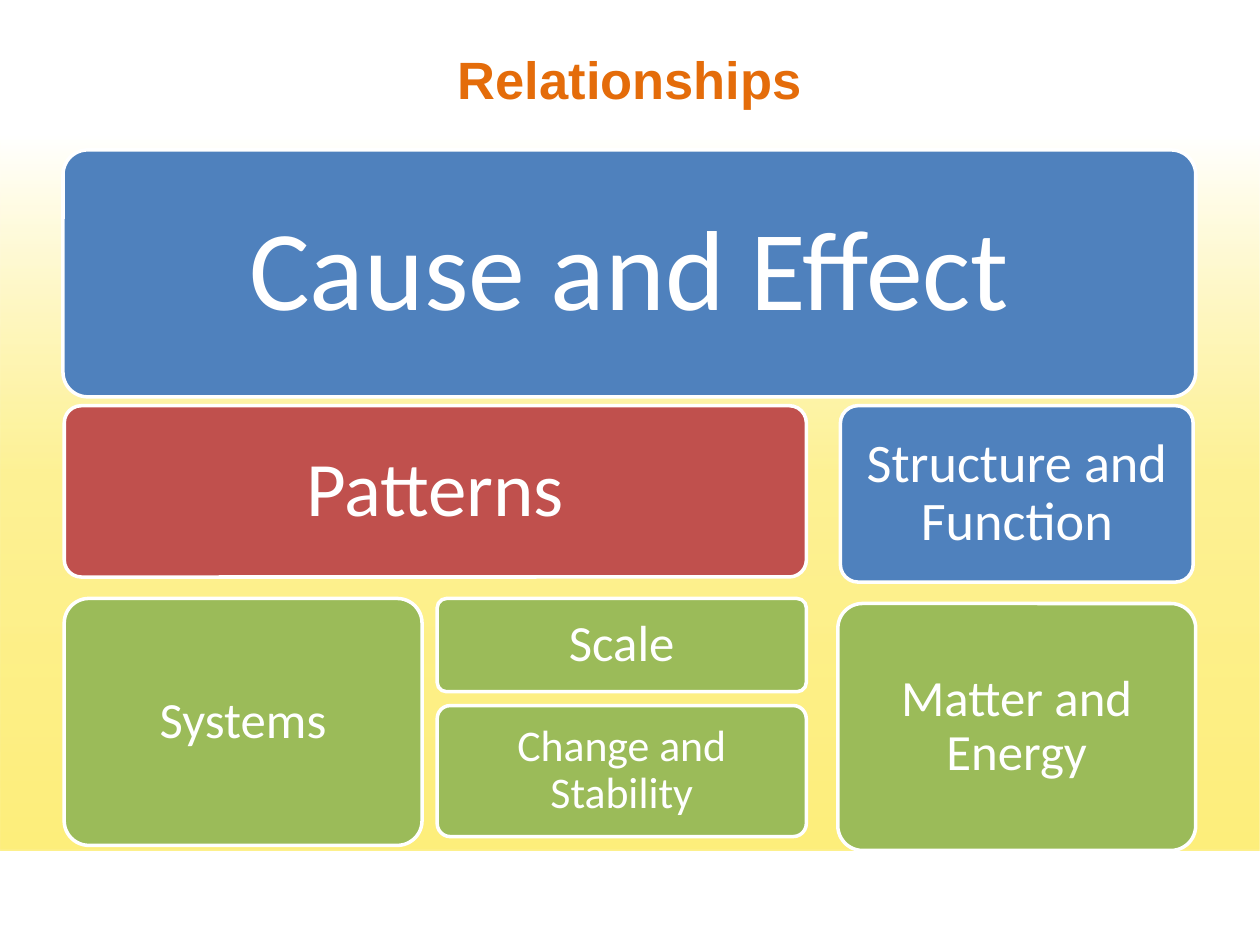
from lxml.etree import SubElement
from pptx import Presentation
from pptx.dml.color import RGBColor
from pptx.enum.shapes import MSO_SHAPE
from pptx.enum.text import MSO_ANCHOR, PP_ALIGN
from pptx.oxml.ns import qn
from pptx.util import Inches, Pt

WHITE = RGBColor(0xFF, 0xFF, 0xFF)
YELLOW = RGBColor(0xFD, 0xEE, 0x7B)
ORANGE = RGBColor(0xE4, 0x6C, 0x0A)
BLUE = RGBColor(0x4F, 0x81, 0xBD)
RED = RGBColor(0xC0, 0x50, 0x4D)
GREEN = RGBColor(0x9B, 0xBB, 0x59)

GRADIENT_STOPS = [(0, YELLOW, 100), (44, YELLOW, 80), (84, WHITE, 100)]

CONCEPTS = [
    ("Cause and Effect", (0.5, 1.19, 8.99, 1.96), BLUE, 65, 0.27),
    ("Patterns", (0.51, 3.22, 5.89, 1.36), RED, 44, 0.18),
    ("Systems", (0.51, 4.75, 2.84, 1.96), GREEN, 29, 0.12),
    ("Scale", (3.47, 4.75, 2.93, 0.74), GREEN, 29, 0.12),
    ("Change and Stability", (3.47, 5.6, 2.93, 1.04), GREEN, 25, 0.1),
    ("Structure and Function", (6.67, 3.22, 2.8, 1.4), BLUE, 31, 0.13),
    ("Matter and Energy", (6.65, 4.79, 2.84, 1.96), GREEN, 29, 0.12),
]


def set_attributes(target, values):
    for name, value in values.items():
        setattr(target, name, value)


def write_text(shape, text, color, font_format, margin, line_spacing=1.0):
    frame = shape.text_frame
    set_attributes(frame, {"word_wrap": True, "vertical_anchor": MSO_ANCHOR.MIDDLE})
    for side in ("left", "top", "right", "bottom"):
        setattr(frame, f"margin_{side}", Inches(margin))
    paragraph = frame.paragraphs[0]
    set_attributes(paragraph, {"alignment": PP_ALIGN.CENTER, "line_spacing": line_spacing})
    run = paragraph.add_run()
    run.text = text
    set_attributes(run.font, font_format)
    run.font.color.rgb = color


def add_gradient_panel(slide):
    shape = slide.shapes.add_shape(
        MSO_SHAPE.RECTANGLE, 0, 0, Inches(10), Inches(6.75))
    shape.shadow.inherit = False
    shape.line.fill.background()
    shape.fill.gradient()
    shape.fill.gradient_angle = 90
    stop_list = shape._element.spPr.find(".//" + qn("a:gsLst"))
    for stop in list(stop_list):
        stop_list.remove(stop)
    for position, color, opacity in GRADIENT_STOPS:
        stop = SubElement(stop_list, qn("a:gs"), pos=str(position * 1000))
        color_element = SubElement(stop, qn("a:srgbClr"), val=str(color))
        if opacity < 100:
            SubElement(color_element, qn("a:alpha"), val=str(opacity * 1000))


def add_title(slide):
    shape = slide.shapes.add_textbox(Inches(0.5), Inches(0.25), Inches(9), Inches(0.75))
    font_format = {"name": "Arial", "size": Pt(30), "bold": True}
    write_text(shape, "Relationships", ORANGE, font_format, 0.05)


def add_concept(slide, text, box, color, size, margin):
    shape = slide.shapes.add_shape(MSO_SHAPE.ROUNDED_RECTANGLE, *map(Inches, box))
    shape.shadow.inherit = False
    shape.adjustments[0] = 0.1
    shape.fill.solid()
    shape.fill.fore_color.rgb = color
    shape.line.color.rgb = WHITE
    shape.line.width = Pt(2)
    font_format = {"name": "Calibri", "size": Pt(size)}
    write_text(shape, text, WHITE, font_format, margin, 0.9)


def main():
    presentation = Presentation()
    presentation.slide_width = Inches(10)
    presentation.slide_height = Inches(7.5)
    slide = presentation.slides.add_slide(presentation.slide_layouts[6])
    add_gradient_panel(slide)
    add_title(slide)
    for concept in CONCEPTS:
        add_concept(slide, *concept)
    presentation.save("out.pptx")


if __name__ == "__main__":
    main()
